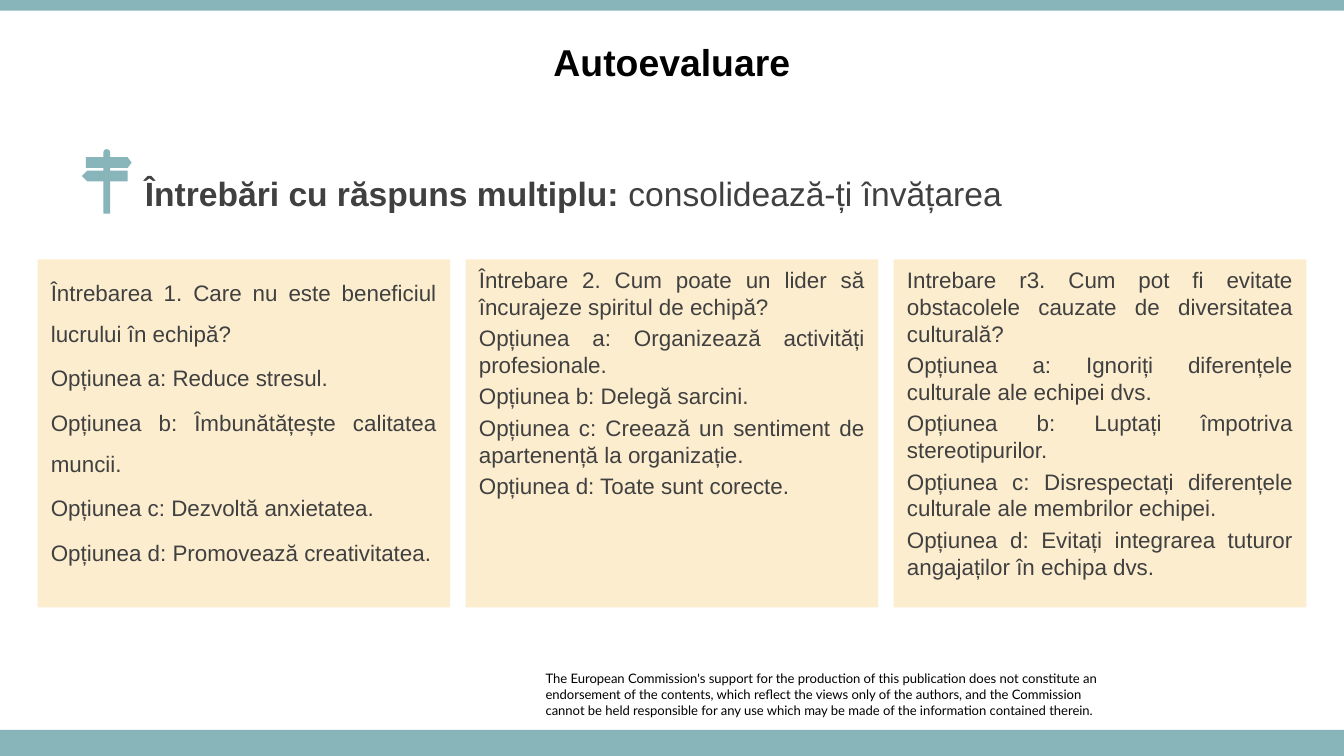
import math
import pptx
import pptx.util
import pptx.dml.color
import pptx.enum.shapes
import pptx.enum.text

WIDE = 10
HIGH = WIDE * 9 / 16
TEAL, CREAM, GRAY, BLACK = "87B5BA", "FCEDCF", "404040", "000000"
TITLE = "Autoevaluare"
HEAD = [("Întrebări cu răspuns multiplu: ", True), ("consolidează-ți învățarea", False)]
CARDS = [
    (1.5, [
        "Întrebarea 1. Care nu este beneficiul lucrului în echipă?",
        "Opțiunea a: Reduce stresul.",
        "Opțiunea b: Îmbunătățește calitatea muncii.",
        "Opțiunea c: Dezvoltă anxietatea.",
        "Opțiunea d: Promovează creativitatea.",
    ]),
    (None, [
        "Întrebare 2. Cum poate un lider să încurajeze spiritul de echipă?",
        "Opțiunea a: Organizează activități profesionale.",
        "Opțiunea b: Delegă sarcini.",
        "Opțiunea c: Creează un sentiment de apartenență la organizație.",
        "Opțiunea d: Toate sunt corecte.",
    ]),
    (None, [
        "Intrebare r3. Cum pot fi evitate obstacolele cauzate de diversitatea culturală?",
        "Opțiunea a: Ignoriți diferențele culturale ale echipei dvs.",
        "Opțiunea b: Luptați împotriva stereotipurilor.",
        "Opțiunea c: Disrespectați diferențele culturale ale membrilor echipei.",
        "Opțiunea d: Evitați integrarea tuturor angajaților în echipa dvs.",
    ]),
]
NOTE = [
    "The European Commission's support for the production of this publication does not "
    "constitute an endorsement of the contents, which reflect the views only of the authors, "
    "and the Commission",
    "cannot be held responsible for any use which may be made of the information contained therein.",
]
POLE = [
    (0.82, 1.17), (0.95, 1.17), (0.98, 1.21), (0.95, 1.25), (0.82, 1.25), (0.82, 1.27),
    (0.95, 1.27), (0.95, 1.35), (0.82, 1.35), (0.82, 1.59), (0.77, 1.59), (0.77, 1.35),
    (0.65, 1.35), (0.61, 1.31), (0.65, 1.27), (0.77, 1.27), (0.77, 1.25), (0.64, 1.25),
    (0.64, 1.17), (0.77, 1.17),
]

deck = pptx.Presentation()
deck.slide_width = pptx.util.Inches(WIDE)
deck.slide_height = pptx.util.Inches(HIGH)
slide = deck.slides.add_slide(deck.slide_layouts[6])
ANCHOR = pptx.enum.text.MSO_ANCHOR
ALIGN = pptx.enum.text.PP_ALIGN


def tint(code):
    """Turn a hex string into a colour."""
    return pptx.dml.color.RGBColor.from_string(code)


def paint(shape, code):
    """Give a shape a plain fill with no line or shadow."""
    shape.fill.solid()
    shape.fill.fore_color.rgb = tint(code)
    shape.line.fill.background()
    shape.shadow.inherit = False
    return shape


def block(box, code):
    """Draw a plain rectangle."""
    kind = pptx.enum.shapes.MSO_SHAPE.RECTANGLE
    return paint(slide.shapes.add_shape(kind, *map(pptx.util.Inches, box)), code)


def write(shape, rows, size, code, face="Arial", align=ALIGN.LEFT,
          anchor=ANCHOR.TOP, bold=False, lead=None, gap=0):
    """Fill a shape with paragraphs, each a string or a list of bold-flagged parts."""
    frame = shape.text_frame
    frame.word_wrap = True
    frame.vertical_anchor = anchor
    for num, row in enumerate(rows):
        para = frame.add_paragraph() if num else frame.paragraphs[0]
        para.alignment = align
        if lead:
            para.line_spacing = lead
        if num:
            para.space_before = pptx.util.Pt(gap)
        font = para.font
        font.name, font.size = face, pptx.util.Pt(size)
        font.color.rgb = tint(code)
        if isinstance(row, str):
            font.bold = bold
            para.add_run().text = row
        else:
            for words, heavy in row:
                run = para.add_run()
                run.text, run.font.bold = words, heavy
    return frame


def label(box, *args, **opts):
    """Add a text box with its wording."""
    return write(slide.shapes.add_textbox(*map(pptx.util.Inches, box)), *args, **opts)


note = label((4.06, 4.99, 4.17, 0.35), NOTE, 7, BLACK, face="Lato")
note.margin_left = note.margin_right = note.margin_top = note.margin_bottom = 0
note.auto_size = pptx.enum.text.MSO_AUTO_SIZE.SHAPE_TO_FIT_TEXT

block((0, 5.43, WIDE, HIGH - 5.43), TEAL)
block((0, 0, WIDE, 0.08), TEAL)
label((0, 0.14, WIDE, 0.63), [TITLE], 20, BLACK,
      align=ALIGN.CENTER, anchor=ANCHOR.MIDDLE, bold=True)
label((0.98, 1.28, 6.69, 0.31), [HEAD], 18, GRAY, anchor=ANCHOR.MIDDLE)

UNIT = 1000
RAD = 0.025
turns = [math.pi * step / 8 for step in range(8, -1, -1)]
cap = [(0.795 + RAD * math.cos(turn), 1.135 - RAD * math.sin(turn)) for turn in turns]
start, *rest = [(round(x * UNIT), round(y * UNIT)) for x, y in cap + POLE]
pen = slide.shapes.build_freeform(*start, scale=pptx.util.Inches(1) / UNIT)
pen.add_line_segments(rest, close=True)
paint(pen.convert_to_shape(), TEAL)

LEFT, TOP, CARD, TALL = 0.28, 1.93, 3.07, 2.59
STEP = (WIDE - 2 * LEFT - CARD) / (len(CARDS) - 1)
for col, (lead, rows) in enumerate(CARDS):
    card = block((LEFT + col * STEP, TOP, CARD, TALL), CREAM)
    write(card, rows, 12, GRAY, align=ALIGN.JUSTIFY, lead=lead, gap=2.4)

deck.save("out.pptx")
